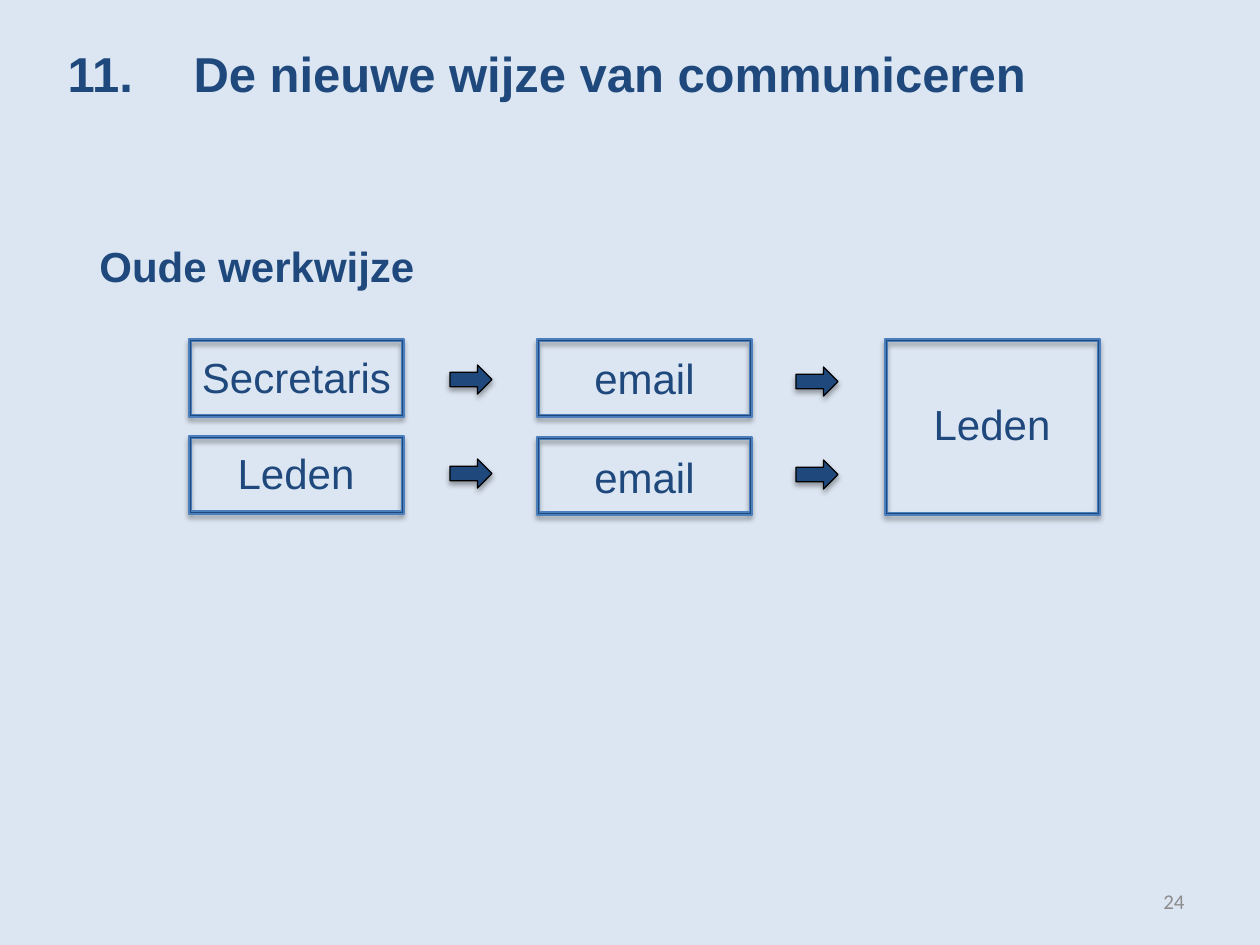
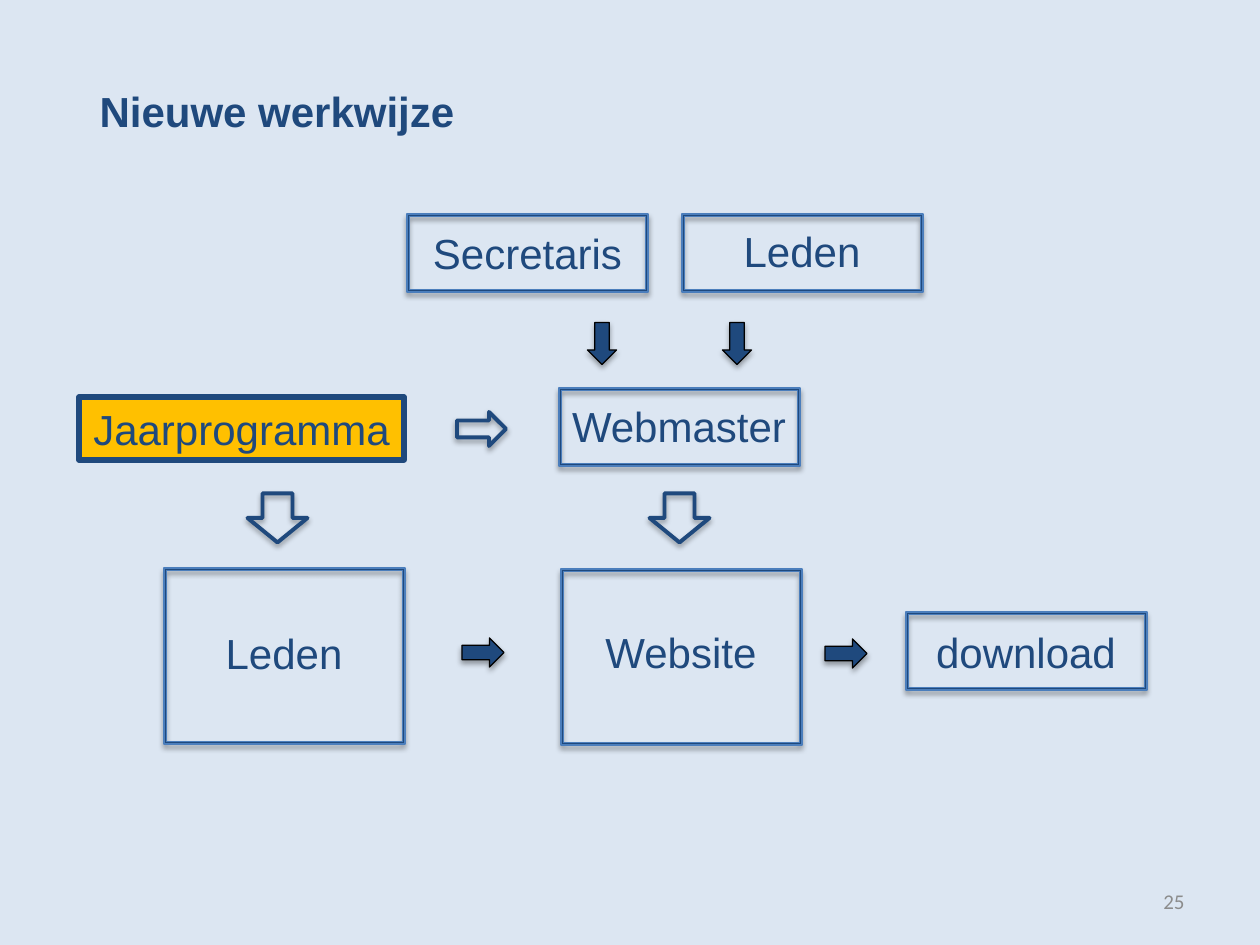
from lxml import etree
from pptx import Presentation
from pptx import util as u
from pptx.dml import color as dml
from pptx.enum import shapes, text
from pptx.oxml import ns

# Shared measures, colours and styles
SCALE = u.Inches(1) / 126
NAVY, EDGE, AMBER, GREY, BLACK, PALE = "1F497D", "4B7EBC", "FFC000", "8C8C8C", "000000", "DCE6F2"
FIT = {"word_wrap": False, "auto_size": text.MSO_AUTO_SIZE.SHAPE_TO_FIT_TEXT,
       "vertical_anchor": text.MSO_ANCHOR.TOP}
FIXED = {"word_wrap": True, "auto_size": text.MSO_AUTO_SIZE.NONE,
         "vertical_anchor": text.MSO_ANCHOR.MIDDLE}
LEFT, CENTER, RIGHT = text.PP_ALIGN.LEFT, text.PP_ALIGN.CENTER, text.PP_ALIGN.RIGHT
STYLES = {
    "title": (FIT, LEFT, NAVY, {"name": "Arial", "size": u.Pt(28), "bold": True}),
    "heading": (FIT, LEFT, NAVY, {"name": "Arial", "size": u.Pt(24), "bold": True}),
    "label": (FIT, CENTER, NAVY, {"name": "Arial", "size": u.Pt(24), "bold": False}),
    "number": (FIXED, RIGHT, GREY, {"name": "Calibri", "size": u.Pt(12), "bold": False}),
}
LABEL_WIDTHS = {"Secretaris": 217, "Leden": 144, "email": 127, "Website": 178,
                "download": 208, "Webmaster": 242}
LABEL_HEIGHT = 63
FRAME_THICKNESS = 2.71
SHADOW = {"blurRad": "39400", "dist": "22900", "dir": "5400000", "rotWithShape": "0"}

# Arrow kinds: width, height, fill, line colour, line width in points
ARROWS = {
    "solid": (42, 29, NAVY, BLACK, 0.75),
    "open": (49, 34, None, NAVY, 2.25),
    "wide": (49, 60, None, NAVY, 2.25),
}

# Frames: label, label top, left, top, width, height
# Arrows: kind, left, top, rotation
SLIDES = [
    {
        "number": "24",
        "title": ("11.\tDe nieuwe wijze van communiceren", "title", (55, 37, 994, 72)),
        "headings": [("Oude werkwijze", (87, 234, 343, 63))],
        "frames": [
            ("Secretaris", 345, 189, 339, 215, 78),
            ("Leden", 441, 189, 436, 215, 78),
            ("email", 346, 537, 339, 215, 78),
            ("email", 445, 537, 437, 215, 78),
            ("Leden", 392, 885, 339, 215, 176),
        ],
        "arrows": [("solid", 450, 365, 0), ("solid", 450, 459, 0),
                   ("solid", 796, 367, 0), ("solid", 796, 460, 0)],
        "highlights": [],
    },
    {
        "number": "25",
        "title": ("Nieuwe werkwijze", "heading", (87, 79, 383, 63)),
        "headings": [],
        "frames": [
            ("Secretaris", 221, 407, 214, 241, 78),
            ("Leden", 219, 682, 214, 241, 78),
            ("Webmaster", 394, 559, 388, 241, 78),
            ("Leden", 621, 164, 568, 241, 176),
            ("Website", 620, 561, 569, 241, 176),
            ("download", 620, 906, 612, 241, 78),
        ],
        "arrows": [("solid", 581, 329, 90), ("solid", 716, 329, 90),
                   ("open", 457, 412, 0), ("wide", 253, 488, 90), ("wide", 655, 488, 90),
                   ("solid", 462, 638, 0), ("solid", 825, 639, 0)],
        "highlights": [("Jaarprogramma", (79, 397, 325, 63))],
    },
]


def paint(fill, value):
    """Fill with a hex colour, or leave open when there is none."""
    if value is None:
        fill.background()
    else:
        fill.solid()
        fill.fore_color.rgb = dml.RGBColor.from_string(value)


def write(shape, content, style):
    """Put one formatted paragraph in a shape."""
    layout, alignment, value, font = STYLES[style]
    for name, setting in layout.items():
        setattr(shape.text_frame, name, setting)
    paragraph = shape.text_frame.paragraphs[0]
    paragraph.alignment = alignment
    run = paragraph.add_run()
    run.text = content
    for name, setting in font.items():
        setattr(run.font, name, setting)
    paint(run.font.fill, value)


presentation = Presentation()
presentation.slide_width, presentation.slide_height = u.Inches(10), u.Inches(7.5)
paint(presentation.slide_master.background.fill, PALE)

for page in SLIDES:
    slide = presentation.slides.add_slide(presentation.slide_layouts[5])

    # Title
    content, style, at = page["title"]
    title = slide.shapes.title
    title.left, title.top, title.width, title.height = [round(v * SCALE) for v in at]
    write(title, content, style)

    # Headings, labels centred on their frames, and the page number
    texts = [(page["number"], "number", (903, 876, 294, 50))]
    texts += [(content, "heading", at) for content, at in page["headings"]]
    for label, label_top, left, top, width, height in page["frames"]:
        label_width = LABEL_WIDTHS[label]
        label_left = left + (width - label_width) // 2
        texts.append((label, "label", (label_left, label_top, label_width, LABEL_HEIGHT)))
    for content, style, at in texts:
        box = slide.shapes.add_textbox(*[round(v * SCALE) for v in at])
        write(box, content, style)

    # Highlighted boxes
    for content, at in page["highlights"]:
        shape = slide.shapes.add_shape(shapes.MSO_SHAPE.RECTANGLE, *[round(v * SCALE) for v in at])
        shape.shadow.inherit = False
        paint(shape.fill, AMBER)
        paint(shape.line.fill, NAVY)
        shape.line.width = u.Pt(3)
        write(shape, content, "label")

    # Frames and arrows, all with the same soft shadow
    figures = []
    for label, label_top, left, top, width, height in page["frames"]:
        figures.append((shapes.MSO_SHAPE.FRAME, (left, top, width, height), 0, NAVY, EDGE, 0.75))
    for kind, left, top, rotation in page["arrows"]:
        width, height, fill, line, weight = ARROWS[kind]
        figures.append((shapes.MSO_SHAPE.RIGHT_ARROW, (left, top, width, height),
                        rotation, fill, line, weight))
    for preset, at, rotation, fill, line, weight in figures:
        shape = slide.shapes.add_shape(preset, *[round(v * SCALE) for v in at])
        shape.rotation = rotation
        paint(shape.fill, fill)
        paint(shape.line.fill, line)
        shape.line.width = u.Pt(weight)
        if preset == shapes.MSO_SHAPE.FRAME:
            shape.adjustments[0] = round(FRAME_THICKNESS / at[3], 3)
        shape.shadow.inherit = False
        effects = shape.element.find(".//" + ns.qn("a:effectLst"))
        shadow = etree.SubElement(effects, ns.qn("a:outerShdw"), SHADOW)
        tint = etree.SubElement(shadow, ns.qn("a:srgbClr"), val=BLACK)
        etree.SubElement(tint, ns.qn("a:alpha"), val="35000")

presentation.save("out.pptx")
